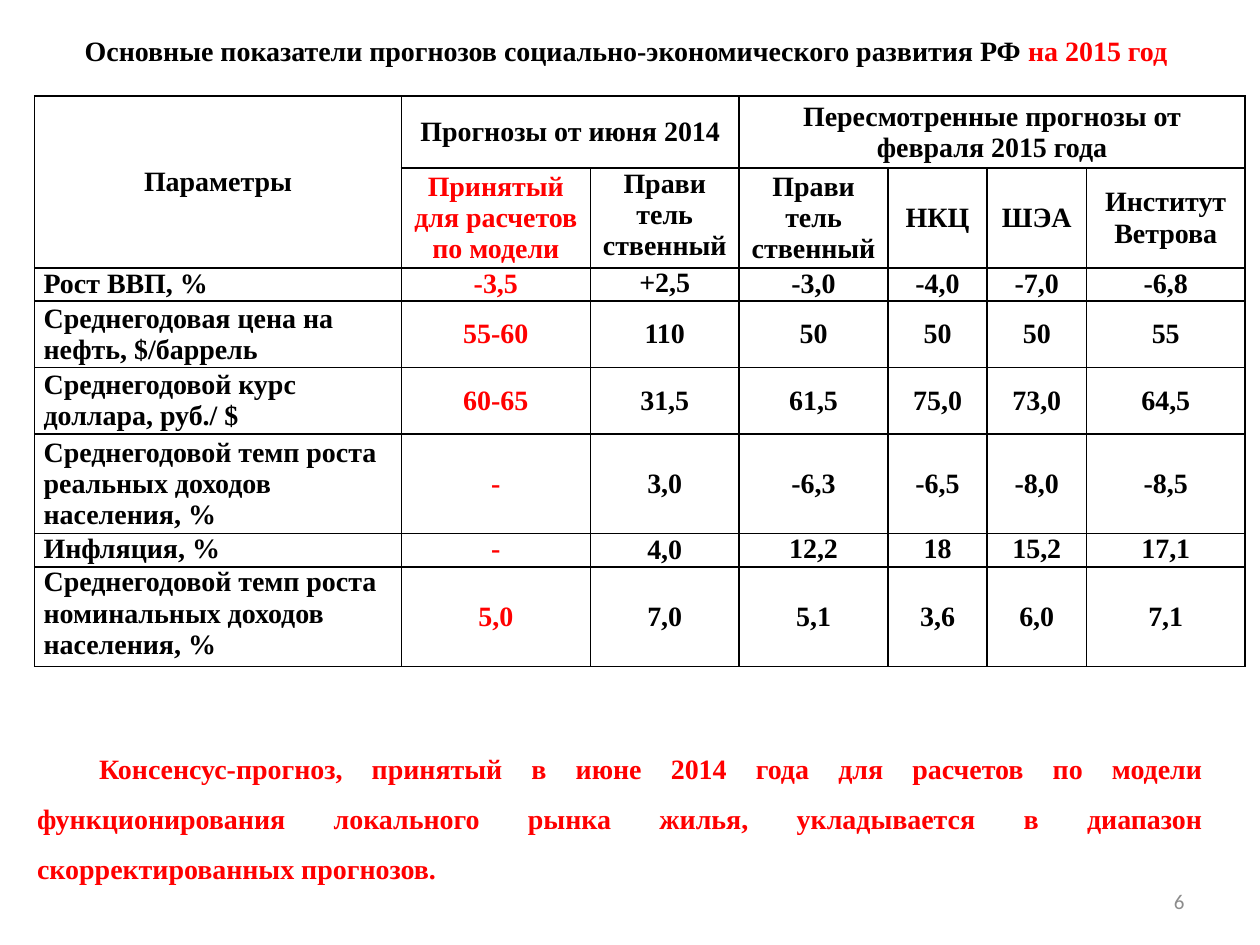
"""Build a slide comparing economic forecasts for 2015."""
from lxml.etree import SubElement
from pptx import Presentation
from pptx.dml.color import RGBColor
from pptx.enum.text import MSO_ANCHOR, MSO_AUTO_SIZE, PP_ALIGN
from pptx.oxml.ns import qn
from pptx.util import Cm, Pt

BLACK = RGBColor(0x00, 0x00, 0x00)
RED = RGBColor(0xFF, 0x00, 0x00)
GRAY = RGBColor(0x8C, 0x8C, 0x8C)

COLUMN_WIDTHS = (7.39, 3.81, 3, 3, 2, 2, 3.2)
ROW_HEIGHTS = (1.45, 2.01, 0.67, 1.34, 1.34, 2.01, 0.67, 2.01)
MODEL_COLUMN = 1
INFLATION_ROW = 6
SPANS = ((0, 0, 1, 0), (0, 1, 0, 2), (0, 3, 0, 6))
TOP_CELLS = {(1, 2), (2, 2), (7, 0)} | {(INFLATION_ROW, c) for c in (0, 1, 3, 4, 5, 6)}
FORECASTS = (
    ("Параметры", "Прогнозы от июня 2014", "",
     "Пересмотренные прогнозы от февраля 2015 года", "", "", ""),
    ("", "Принятый для расчетов по модели", "Прави тель ственный",
     "Прави тель ственный", "НКЦ", "ШЭА", "Институт Ветрова"),
    ("Рост ВВП, %", "-3,5", "+2,5", "-3,0", "-4,0", "-7,0", "-6,8"),
    ("Среднегодовая цена на нефть, $/баррель", "55-60", "110", "50", "50", "50", "55"),
    ("Среднегодовой курс доллара, руб./ $",
     "60-65", "31,5", "61,5", "75,0", "73,0", "64,5"),
    ("Среднегодовой темп роста реальных доходов населения, %",
     "-", "3,0", "-6,3", "-6,5", "-8,0", "-8,5"),
    ("Инфляция, %", "-", "4,0", "12,2", "18", "15,2", "17,1"),
    ("Среднегодовой темп роста номинальных доходов населения, %",
     "5,0", "7,0", "5,1", "3,6", "6,0", "7,1"),
)


class ForecastSlide:
    """Hold the text style and the slide being filled."""

    def __init__(self, slide, font="Times New Roman", size=16):
        self.slide = slide
        self.font = font
        self.size = size

    def add_run(self, paragraph, text, color, font=None, size=None, bold=True):
        run = paragraph.add_run()
        run.text = text
        run.font.name = font or self.font
        run.font.size = Pt(size or self.size)
        run.font.bold = bold
        run.font.color.rgb = color

    def add_text(self, left, top, width, height, align, wrap=True):
        frame = self.slide.shapes.add_textbox(
            Cm(left), Cm(top), Cm(width), Cm(height)).text_frame
        frame.word_wrap = wrap
        frame.auto_size = MSO_AUTO_SIZE.NONE
        frame.vertical_anchor = MSO_ANCHOR.MIDDLE
        paragraph = frame.paragraphs[0]
        paragraph.alignment = align
        return paragraph

    def add_borders(self, cell):
        properties = cell._tc.get_or_add_tcPr()
        for side in ("a:lnL", "a:lnR", "a:lnT", "a:lnB"):
            line = SubElement(properties, qn(side), w=str(Pt(1)))
            fill = SubElement(line, qn("a:solidFill"))
            SubElement(fill, qn("a:srgbClr"), val=str(BLACK))

    def fill_cell(self, cell, text, row, column):
        cell.margin_left = cell.margin_right = Cm(0.18)
        cell.margin_top = cell.margin_bottom = 0
        top = (row, column) in TOP_CELLS
        cell.vertical_anchor = MSO_ANCHOR.TOP if top else MSO_ANCHOR.MIDDLE
        self.add_borders(cell)
        cell.fill.background()
        if not text:
            return
        paragraph = cell.text_frame.paragraphs[0]
        if row < 2 or column > 0:
            paragraph.alignment = PP_ALIGN.CENTER
        elif row == INFLATION_ROW:
            paragraph.alignment = PP_ALIGN.JUSTIFY
        else:
            paragraph.alignment = PP_ALIGN.LEFT
        in_model = row > 0 and column == MODEL_COLUMN
        self.add_run(paragraph, text, RED if in_model else BLACK)

    def add_table(self, left, top, rows):
        table = self.slide.shapes.add_table(
            len(ROW_HEIGHTS), len(COLUMN_WIDTHS), Cm(left), Cm(top),
            Cm(sum(COLUMN_WIDTHS)), Cm(sum(ROW_HEIGHTS))).table
        table.first_row = table.horz_banding = False
        for column, width in zip(table.columns, COLUMN_WIDTHS):
            column.width = Cm(width)
        for table_row, height in zip(table.rows, ROW_HEIGHTS):
            table_row.height = Cm(height)
        for first_row, first_column, last_row, last_column in SPANS:
            table.cell(first_row, first_column).merge(table.cell(last_row, last_column))
        for row, texts in enumerate(rows):
            for column, text in enumerate(texts):
                self.fill_cell(table.cell(row, column), text, row, column)


def main():
    presentation = Presentation()
    presentation.slide_width = Cm(25.4)
    presentation.slide_height = Cm(19.05)
    forecast = ForecastSlide(
        presentation.slides.add_slide(presentation.slide_layouts[6]))

    page_number = forecast.add_text(18.2, 17.66, 5.93, 1.01, PP_ALIGN.RIGHT)
    forecast.add_run(page_number, "6", GRAY, "Calibri", 12, False)

    title = forecast.add_text(1.3, 0.54, 22.64, 0.94, PP_ALIGN.CENTER, wrap=False)
    forecast.add_run(
        title, "Основные показатели прогнозов социально-экономического развития РФ ", BLACK)
    forecast.add_run(title, "на 2015 год", RED)

    forecast.add_table(0.7, 1.94, FORECASTS)

    conclusion = forecast.add_text(0.5, 14.73, 24, 3.2, PP_ALIGN.JUSTIFY)
    conclusion.line_spacing = 1.5
    conclusion._p.get_or_add_pPr().set("indent", str(Cm(1.25)))
    forecast.add_run(
        conclusion,
        "Консенсус-прогноз, принятый в июне 2014 года для расчетов по модели "
        "функционирования локального рынка жилья, укладывается в диапазон "
        "скорректированных прогнозов.", RED)

    presentation.save("out.pptx")


if __name__ == "__main__":
    main()
